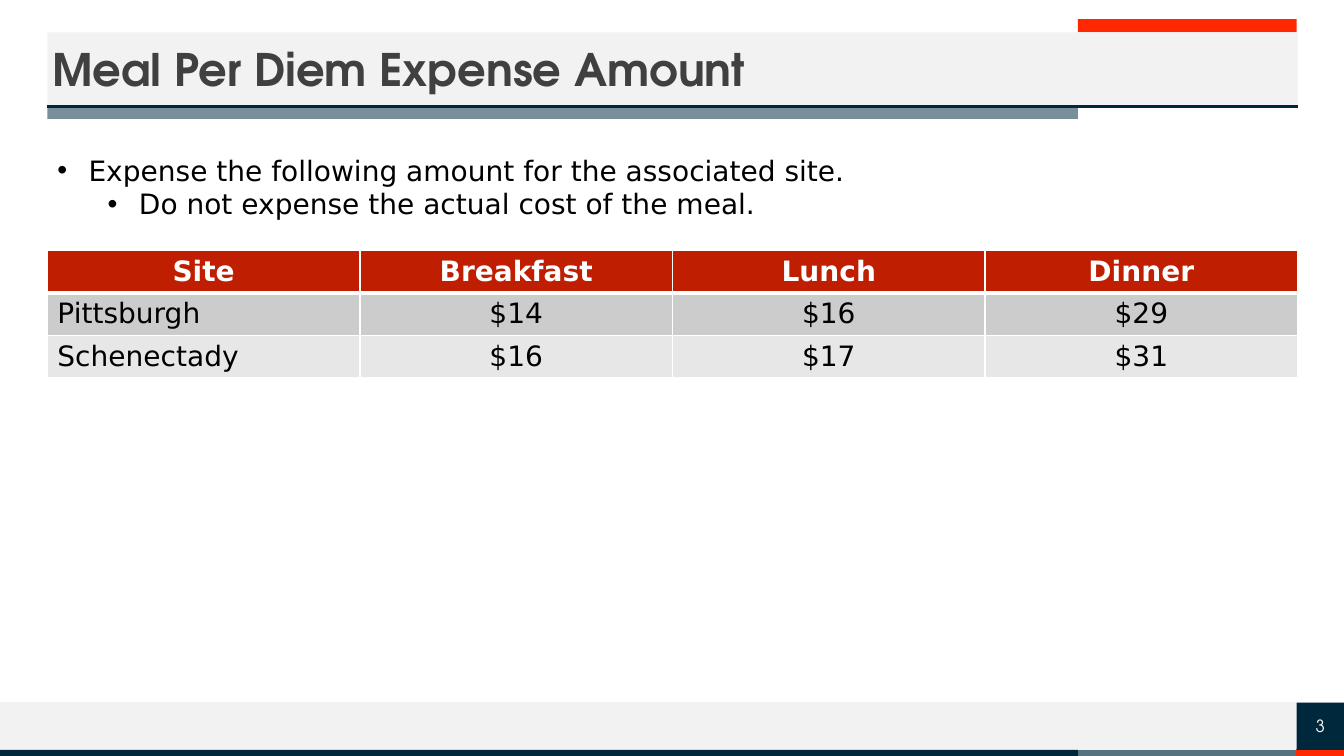
from lxml.etree import SubElement
from pptx import Presentation
from pptx.dml.color import RGBColor
from pptx.enum.shapes import MSO_CONNECTOR, MSO_SHAPE
from pptx.enum.text import MSO_ANCHOR, PP_ALIGN
from pptx.oxml import parse_xml
from pptx.oxml.ns import nsdecls, qn
from pptx.util import Inches, Pt

NAVY, SLATE, RED, PALE = "00283C", "57727F", "FF2800", "F2F2F2"
HEADING_FONT, BODY_FONT = "TeX Gyre Adventor", "DejaVu Sans"
AMOUNTS = [
    ("Site", "Breakfast", "Lunch", "Dinner"),
    ("Pittsburgh", "$14", "$16", "$29"),
    ("Schenectady", "$16", "$17", "$31"),
]
ROW_FILLS = ["BF1E00", "CCCCCC", "E7E7E7"]
BULLETS = [
    (0, "Expense the following amount for the associated site."),
    (1, "Do not expense the actual cost of the meal."),
]


def color(value):
    return RGBColor.from_string(value)


def add_bar(slide, left, top, width, height, fill):
    shape = slide.shapes.add_shape(
        MSO_SHAPE.RECTANGLE, Inches(left), Inches(top), Inches(width), Inches(height))
    shape.shadow.inherit = False
    shape.fill.solid()
    shape.fill.fore_color.rgb = color(fill)
    shape.line.fill.background()
    return shape


def add_rule(slide, left, right, top, line_color, weight):
    line = slide.shapes.add_connector(
        MSO_CONNECTOR.STRAIGHT, Inches(left), Inches(top), Inches(right), Inches(top))
    line.line.color.rgb = color(line_color)
    line.line.width = Pt(weight)
    SubElement(line._element.spPr, qn("a:effectLst"))


def add_run(paragraph, text, size, font, fill, bold=False):
    run = paragraph.add_run()
    run.text = text
    run.font.size = Pt(size)
    run.font.name = font
    run.font.bold = bold
    run.font.color.rgb = color(fill)
    return run


def set_frame(frame, side, vertical):
    frame.word_wrap = True
    frame.vertical_anchor = MSO_ANCHOR.MIDDLE
    frame.margin_left = frame.margin_right = Inches(side)
    frame.margin_top = frame.margin_bottom = Inches(vertical)


def add_footer(slide, left, top, width, height, number):
    """Footer band with a square page number and a three-colour strip below."""
    strip, accent = 0.06, 2.17
    square = height - strip
    band = width - square
    bottom = top + square
    add_bar(slide, left + band - accent, bottom, accent, strip, SLATE)
    add_bar(slide, left, top, band, square, PALE)
    add_bar(slide, left, bottom, band - accent, strip, NAVY)
    corner = add_bar(slide, left + band, bottom, square, strip, RED)
    corner.line.color.rgb = color(RED)
    corner.line.width = Pt(1)
    add_rule(slide, left, left + width, top, PALE, 0.5)
    page = add_bar(slide, left + band, top, square, square, NAVY)
    set_frame(page.text_frame, 0, 0)
    paragraph = page.text_frame.paragraphs[0]
    paragraph.alignment = PP_ALIGN.CENTER
    add_run(paragraph, number, 12, HEADING_FONT, "FFFFFF")


def add_header(slide, left, top, width, height, title):
    """Title panel with a red tab above, and a rule and translucent bar below."""
    accent, tab = 2.17, 0.13
    base = top + height + 0.02
    add_bar(slide, left + width - accent - 0.01, top - tab, accent, tab, RED)
    under = add_bar(slide, left, base, width - accent - 0.01, 0.12, SLATE)
    fill = under._element.spPr.find(qn("a:solidFill"))
    SubElement(fill[0], qn("a:alpha"), val="80000")
    add_rule(slide, left, left + width, base, NAVY, 2)
    panel = add_bar(slide, left, top, width, height, PALE)
    set_frame(panel.text_frame, 0.05, 0.2)
    paragraph = panel.text_frame.paragraphs[0]
    paragraph.alignment = PP_ALIGN.LEFT
    run = add_run(paragraph, title, 32, HEADING_FONT, "404040", True)
    run.font._element.insert(0, parse_xml(
        f'<a:ln {nsdecls("a")} w="9525"><a:solidFill>'
        '<a:srgbClr val="404040"/></a:solidFill></a:ln>'))


def add_bullets(slide, left, top, width, height):
    box = slide.shapes.add_textbox(
        Inches(left), Inches(top), Inches(width), Inches(height))
    frame = box.text_frame
    frame.word_wrap = True
    for index, (level, text) in enumerate(BULLETS):
        paragraph = frame.add_paragraph() if index else frame.paragraphs[0]
        paragraph.level = level
        properties = paragraph._p.get_or_add_pPr()
        properties.set("marL", str(Inches(0.31 + 0.5 * level)))
        properties.set("indent", str(Inches(-0.31)))
        SubElement(properties, qn("a:buFont"), typeface="Arial")
        SubElement(properties, qn("a:buChar"), char="•")
        add_run(paragraph, text, 20, BODY_FONT, "000000")


def set_borders(cell, is_header):
    properties = cell._tc.get_or_add_tcPr()
    for index, side in enumerate(("lnL", "lnR", "lnT", "lnB")):
        weight = 3 if is_header and side == "lnB" else 1
        properties.insert(index, parse_xml(
            f'<a:{side} {nsdecls("a")} w="{Pt(weight)}"><a:solidFill>'
            f'<a:srgbClr val="FFFFFF"/></a:solidFill></a:{side}>'))


def add_amounts(slide, left, top, width, height):
    table = slide.shapes.add_table(
        len(AMOUNTS), len(AMOUNTS[0]), Inches(left), Inches(top),
        Inches(width), Inches(height)).table
    for row, values in enumerate(AMOUNTS):
        is_header = row == 0
        for column, text in enumerate(values):
            cell = table.cell(row, column)
            cell.fill.solid()
            cell.fill.fore_color.rgb = color(ROW_FILLS[row])
            set_borders(cell, is_header)
            paragraph = cell.text_frame.paragraphs[0]
            centred = is_header or column > 0
            paragraph.alignment = PP_ALIGN.CENTER if centred else PP_ALIGN.LEFT
            add_run(paragraph, text, 20, BODY_FONT,
                    "FFFFFF" if is_header else "000000", is_header)


def main():
    presentation = Presentation()
    presentation.slide_width = Inches(13.33)
    presentation.slide_height = Inches(7.5)
    slide = presentation.slides.add_slide(presentation.slide_layouts[6])
    add_footer(slide, 0, 6.97, 13.33, 0.53, "3")
    add_header(slide, 0.47, 0.32, 12.4, 0.72, "Meal Per Diem Expense Amount")
    add_amounts(slide, 0.47, 2.48, 12.4, 1.23)
    add_bullets(slide, 0.47, 1.47, 11.9, 0.77)
    presentation.save("out.pptx")


if __name__ == "__main__":
    main()
